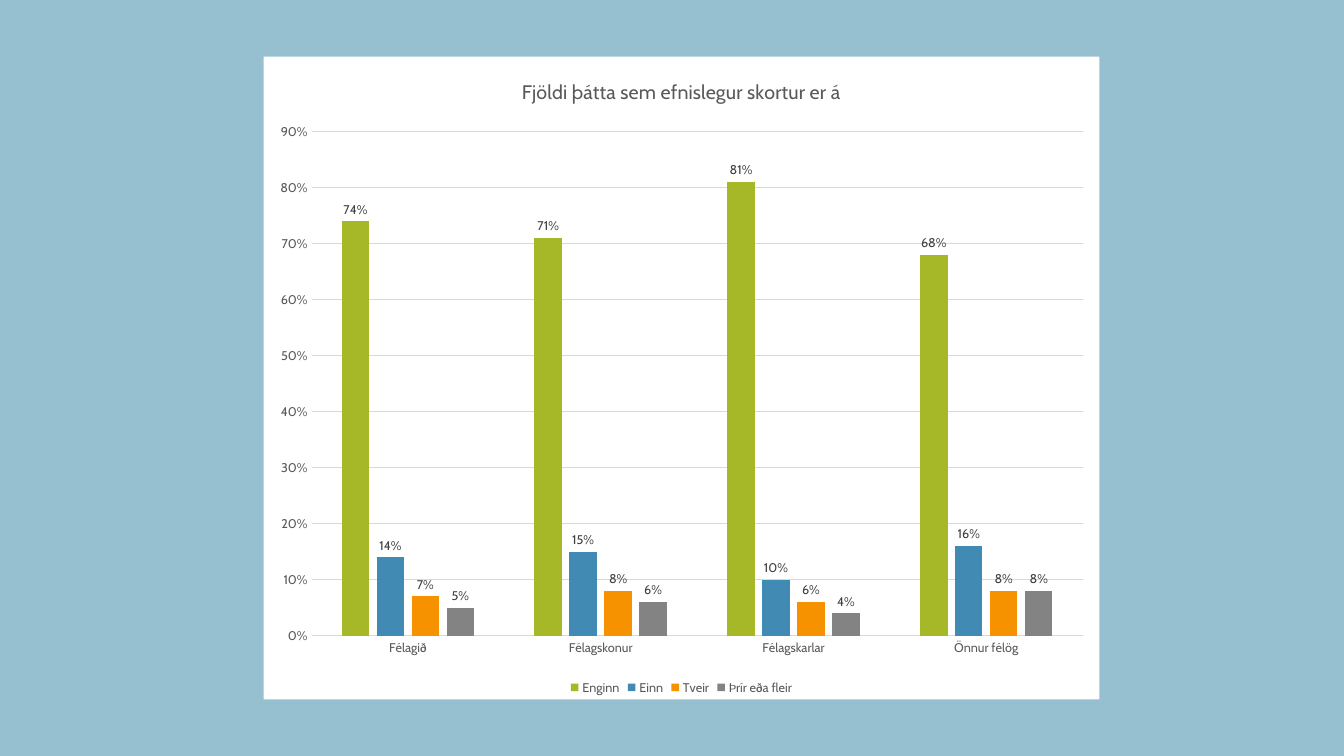
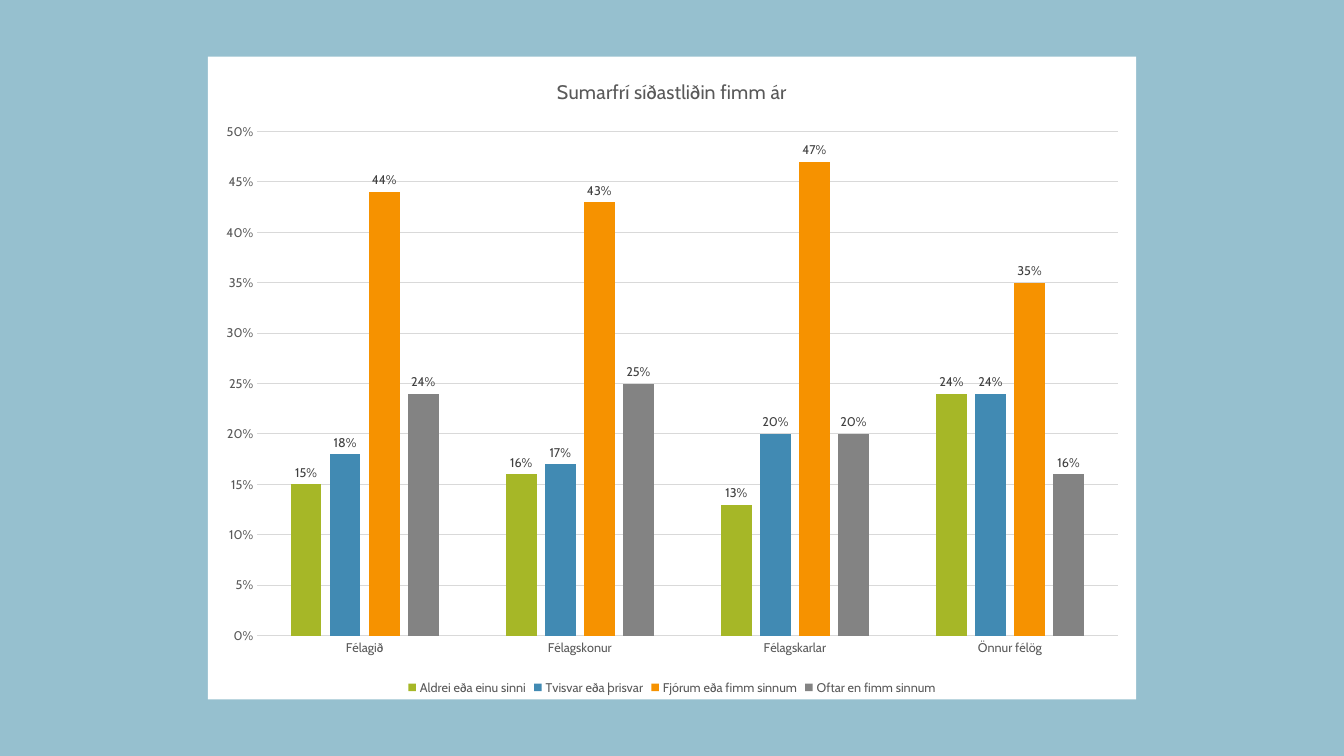
from lxml import etree
from pptx import Presentation
from pptx.chart.data import CategoryChartData
from pptx.dml.color import RGBColor
from pptx.enum.chart import XL_CHART_TYPE as CT, XL_LABEL_POSITION as LP
from pptx.enum.chart import XL_LEGEND_POSITION as LEG, XL_TICK_MARK as TM
from pptx.oxml import parse_xml
from pptx.oxml.ns import nsdecls
from pptx.util import Emu, Pt

SCALE = 9525
FONT = "Cabin"
BACK, PANEL, GRID = "96C0CF", "FFFFFF", "D9D9D9"
TEXT, LABEL = "595959", "404040"
SERIES_COLORS = ["A6B727", "418AB3", "F69200", "838383"]
GROUPS = ["Félagið", "Félagskonur", "Félagskarlar", "Önnur félög"]
CHARTS = [
    {
        "title": "Fjöldi þátta sem efnislegur skortur er á",
        "box": (251, 54, 796, 612),
        "top": 0.9,
        "step": 0.1,
        "series": {
            "Enginn": (0.74, 0.71, 0.81, 0.68),
            "Einn": (0.14, 0.15, 0.1, 0.16),
            "Tveir": (0.07, 0.08, 0.06, 0.08),
            "Þrír eða fleir": (0.05, 0.06, 0.04, 0.08),
        },
    },
    {
        "title": "Sumarfrí síðastliðin fimm ár",
        "box": (198, 54, 884, 612),
        "top": 0.5,
        "step": 0.05,
        "series": {
            "Aldrei eða einu sinni": (0.15, 0.16, 0.13, 0.24),
            "Tvisvar eða þrisvar": (0.18, 0.17, 0.2, 0.24),
            "Fjórum eða fimm sinnum": (0.44, 0.43, 0.47, 0.35),
            "Oftar en fimm sinnum": (0.24, 0.25, 0.2, 0.16),
        },
    },
]


def px(n):
    return Emu(n * SCALE)


def rgb(value):
    return RGBColor.from_string(value)


def style_font(font, size, color):
    font.name = FONT
    font.size = Pt(size)
    font.bold = False
    font.color.rgb = rgb(color)


def style_line(line, color):
    line.color.rgb = rgb(color)
    line.width = Pt(0.75)


def fill_panel(chart):
    sp_pr = parse_xml(f"<c:spPr {nsdecls('c', 'a')}/>")
    fill = etree.SubElement(sp_pr, f"{{{sp_pr.nsmap['a']}}}solidFill")
    etree.SubElement(fill, f"{{{sp_pr.nsmap['a']}}}srgbClr", val=PANEL)
    line = etree.SubElement(sp_pr, f"{{{sp_pr.nsmap['a']}}}ln")
    etree.SubElement(line, f"{{{sp_pr.nsmap['a']}}}noFill")
    plot_part = chart.element.find(f"{{{sp_pr.nsmap['c']}}}chart")
    plot_part.addnext(sp_pr)


def style_title(chart, title):
    chart.has_title = True
    tf = chart.chart_title.text_frame
    tf.text = title
    style_font(tf.paragraphs[0].runs[0].font, 14, TEXT)
    chart.chart_title.include_in_layout = False


def style_axes(chart, top, step):
    cat, val = chart.category_axis, chart.value_axis
    for axis in (cat, val):
        axis.major_tick_mark = axis.minor_tick_mark = TM.NONE
        style_font(axis.tick_labels.font, 9, TEXT)
    style_line(cat.format.line, GRID)
    val.format.line.fill.background()
    val.minimum_scale, val.maximum_scale, val.major_unit = 0, top, step
    val.has_major_gridlines = True
    style_line(val.major_gridlines.format.line, GRID)
    val.tick_labels.number_format = "0%"
    val.tick_labels.number_format_is_linked = False


def style_series(plot):
    plot.gap_width, plot.overlap = 219, -27
    plot.vary_by_categories = False
    for series, color in zip(plot.series, SERIES_COLORS):
        series.format.fill.solid()
        series.format.fill.fore_color.rgb = rgb(color)
        series.invert_if_negative = False
        labels = series.data_labels
        labels.show_value = True
        labels.position = LP.OUTSIDE_END
        labels.number_format = "0%"
        labels.number_format_is_linked = False
        style_font(labels.font, 9, LABEL)


def style_legend(chart):
    chart.has_legend = True
    chart.legend.position = LEG.BOTTOM
    chart.legend.include_in_layout = False
    style_font(chart.legend.font, 9, TEXT)


def add_column_chart(slide, box, title, top, step, series):
    data = CategoryChartData(number_format="0%")
    data.categories = GROUPS
    for name, values in series.items():
        data.add_series(name, values)
    frame = slide.shapes.add_chart(CT.COLUMN_CLUSTERED, *map(px, box), data)
    chart = frame.chart
    style_font(chart.font, 10, "000000")
    fill_panel(chart)
    style_title(chart, title)
    style_axes(chart, top, step)
    style_series(chart.plots[0])
    style_legend(chart)


def add_chart_slide(prs, spec_row):
    slide = prs.slides.add_slide(prs.slide_layouts[6])
    slide.background.fill.solid()
    slide.background.fill.fore_color.rgb = rgb(BACK)
    add_column_chart(slide, **spec_row)


def main():
    prs = Presentation()
    prs.slide_width, prs.slide_height = px(1280), px(720)
    for row in CHARTS:
        add_chart_slide(prs, row)
    prs.save("out.pptx")


if __name__ == "__main__":
    main()
